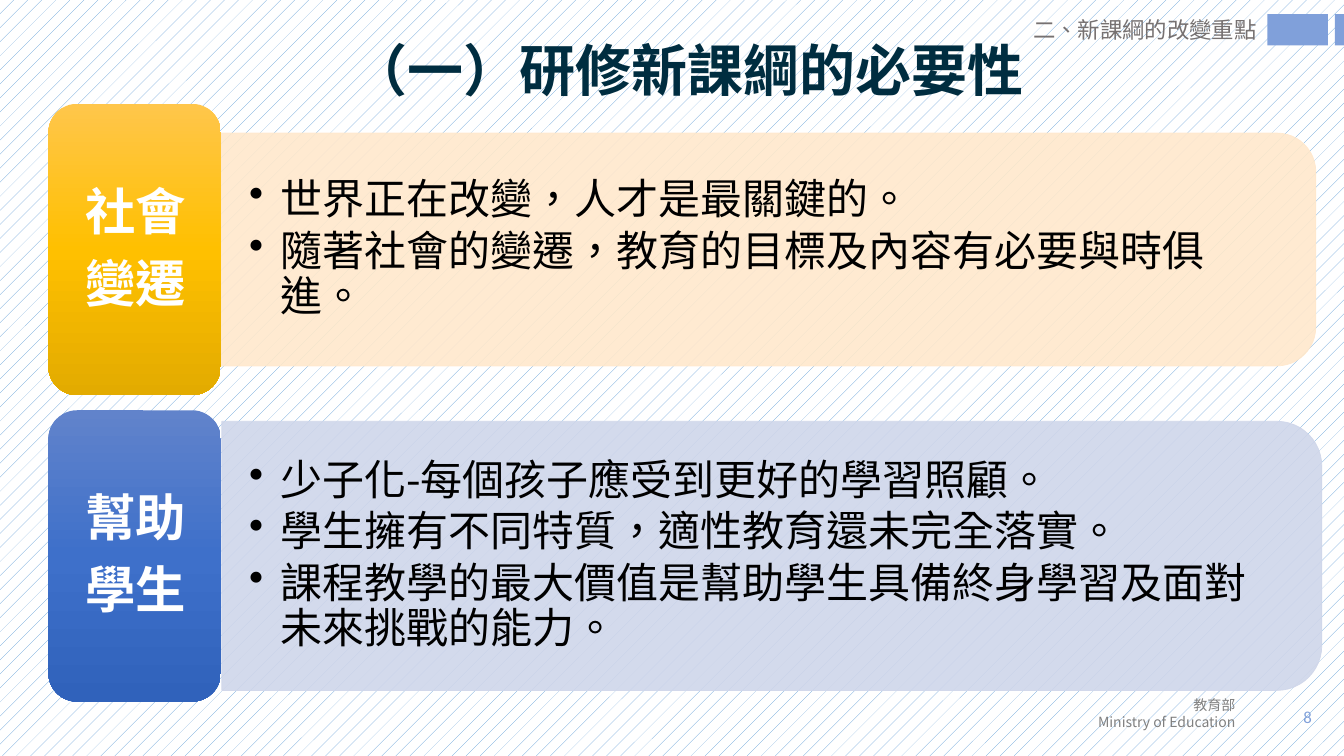
"""Builds the slide on why the new curriculum guidelines need study."""
import copy
from lxml import etree
from pptx import Presentation
from pptx import util as u
from pptx.dml.color import RGBColor
from pptx.enum import dml, shapes, text
from pptx.oxml import ns

TITLE = "（一）研修新課綱的必要性"
SECTION = "二、新課綱的改變重點"
FOOTER = ["教育部", "Ministry of Education"]
PAGE = "8"
TABS = [(12.57, 0.6), (13.24, 0.09)]
ROWS = [
    dict(label=["社會", "變遷"], top=1.03, panel=(2.19, 1.32, 10.86, 2.31),
         body=(2.2, 1.43, 10.75, 2.09), right=0.72, tint="FFE8CC",
         shades=["FFC64B", "FFC000", "E3AB00"],
         points=["世界正在改變，人才是最關鍵的。",
                 "隨著社會的變遷，教育的目標及內容有必要與時俱進。"]),
    dict(label=["幫助", "學生"], top=4.07, panel=(2.2, 4.18, 10.91, 2.67),
         body=(2.2, 4.31, 10.78, 2.41), right=0.27, tint="CFD6EA",
         shades=["6183CB", "3E70CA", "3062BB"],
         points=["少子化-每個孩子應受到更好的學習照顧。",
                 "學生擁有不同特質，適性教育還未完全落實。",
                 "課程教學的最大價值是幫助學生具備終身學習及面對未來挑戰的能力。"]),
]
THEME = dict(
    cjk="Noto Sans CJK SC", accent="80A0DA", stripe="5B9BD5",
    paper="FFFFFF", panel_alpha=90, leading=0.9,
    title=dict(size=40, color="002D40", bold=True),
    section=dict(size=16, color="767171"),
    page=dict(size=12, color="80A0DA", font="Calibri"),
    footer=dict(size=10, color="808080"),
    label=dict(size=36, color="FFFFFF", bold=True),
    point=dict(size=30, color="000000"),
)
ALIGN, ANCHOR = text.PP_ALIGN, text.MSO_ANCHOR
SHAPE = shapes.MSO_SHAPE


def rgb(value):
    return RGBColor.from_string(value)


def inches(values):
    return [u.Inches(v) for v in values]


def add_text(s, box, lines, style, align=ALIGN.LEFT, anchor=ANCHOR.TOP,
             inset=(0.1, 0.05), spacing=None, after=0, wrap=True):
    sp = s.shapes.add_textbox(*inches(box))
    tf = sp.text_frame
    tf.text = "\n".join(lines)
    tf.word_wrap, tf.vertical_anchor = wrap, anchor
    tf.margin_left = tf.margin_right = u.Inches(inset[0])
    tf.margin_top = tf.margin_bottom = u.Inches(inset[1])
    for p in tf.paragraphs:
        p.alignment, p.line_spacing = align, spacing
        p.space_after = u.Pt(after)
        for r in p.runs:
            f = r.font
            f.name = style.get("font", THEME["cjk"])
            f.size, f.bold = u.Pt(style["size"]), style.get("bold", False)
            f.color.rgb = rgb(style["color"])
            rpr = f._element
            rpr.set("lang", "zh-TW")
            etree.SubElement(rpr, ns.qn("a:ea"), typeface=f.name)
    return tf


def add_bullets(tf, indent):
    for p in tf.paragraphs:
        ppr = p._p.get_or_add_pPr()
        ppr.set("marL", str(u.Inches(indent)))
        ppr.set("indent", str(-u.Inches(indent)))
        etree.SubElement(ppr, ns.qn("a:buChar"), char="•")


def add_block(s, kind, box):
    sp = s.shapes.add_shape(kind, *inches(box))
    sp.shadow.inherit = False
    sp.line.fill.background()
    return sp


def add_panel(s, box, tint):
    x, y, w, h = box
    sp = add_block(s, SHAPE.ROUND_2_SAME_RECTANGLE,
                   (x + (w - h) / 2, y + (h - w) / 2, h, w))
    sp.rotation = 90
    sp.line.width = u.Pt(0.5)
    for fill in (sp.fill, sp.line.fill):
        fill.solid()
        fill.fore_color.rgb = rgb(tint)
    for clr in sp._element.spPr.iter(ns.qn("a:srgbClr")):
        etree.SubElement(clr, ns.qn("a:alpha"),
                         val=str(THEME["panel_alpha"] * 1000))


def add_tile(s, box, shades):
    sp = add_block(s, SHAPE.ROUNDED_RECTANGLE, box)
    sp.fill.gradient()
    sp.fill.gradient_angle = 270
    stops = next(sp._element.spPr.iter(ns.qn("a:gsLst")))
    stops.append(copy.deepcopy(stops[0]))
    for i, (stop, shade) in enumerate(zip(sp.fill.gradient_stops, shades)):
        stop.color.rgb = rgb(shade)
        stop.position = i / (len(shades) - 1)


def add_row(s, row):
    add_panel(s, row["panel"], row["tint"])
    tf = add_text(s, row["body"], row["points"], THEME["point"],
                  anchor=ANCHOR.MIDDLE, inset=(0.27, 0.14),
                  spacing=THEME["leading"], after=4.5)
    tf.margin_right = u.Inches(row["right"])
    add_bullets(tf, 0.31)
    add_tile(s, (0.48, row["top"], 1.71, 2.89), row["shades"])
    add_text(s, (0.57, row["top"] + 0.09, 1.55, 2.72), row["label"],
             THEME["label"], ALIGN.CENTER, ANCHOR.MIDDLE, (0.15, 0.07),
             THEME["leading"], 12.6)


def main():
    prs = Presentation()
    prs.slide_width, prs.slide_height = inches((13.33, 7.5))
    s = prs.slides.add_slide(prs.slide_layouts[6])
    bg = s.background.fill
    bg.patterned()
    bg.pattern = dml.MSO_PATTERN.PERCENT_5
    bg.fore_color.rgb, bg.back_color.rgb = rgb(THEME["stripe"]), rgb(THEME["paper"])

    add_text(s, (1.07, 0, 11.5, 1.45), [TITLE], THEME["title"],
             ALIGN.CENTER, ANCHOR.MIDDLE, spacing=THEME["leading"])
    for left, width in TABS:
        tab = add_block(s, SHAPE.RECTANGLE, (left, 0.14, width, 0.31))
        tab.fill.solid()
        tab.fill.fore_color.rgb = rgb(THEME["accent"])
    add_text(s, (10.15, 0.11, 2.8, 0.37), [SECTION], THEME["section"])
    add_text(s, (10.86, 6.96, 2.25, 0.3), [PAGE], THEME["page"],
             ALIGN.RIGHT, ANCHOR.MIDDLE)
    add_text(s, (10.75, 6.86, 1.6, 0.44), FOOTER, THEME["footer"],
             ALIGN.RIGHT, wrap=False)
    for row in ROWS:
        add_row(s, row)
    prs.save("out.pptx")


if __name__ == "__main__":
    main()
